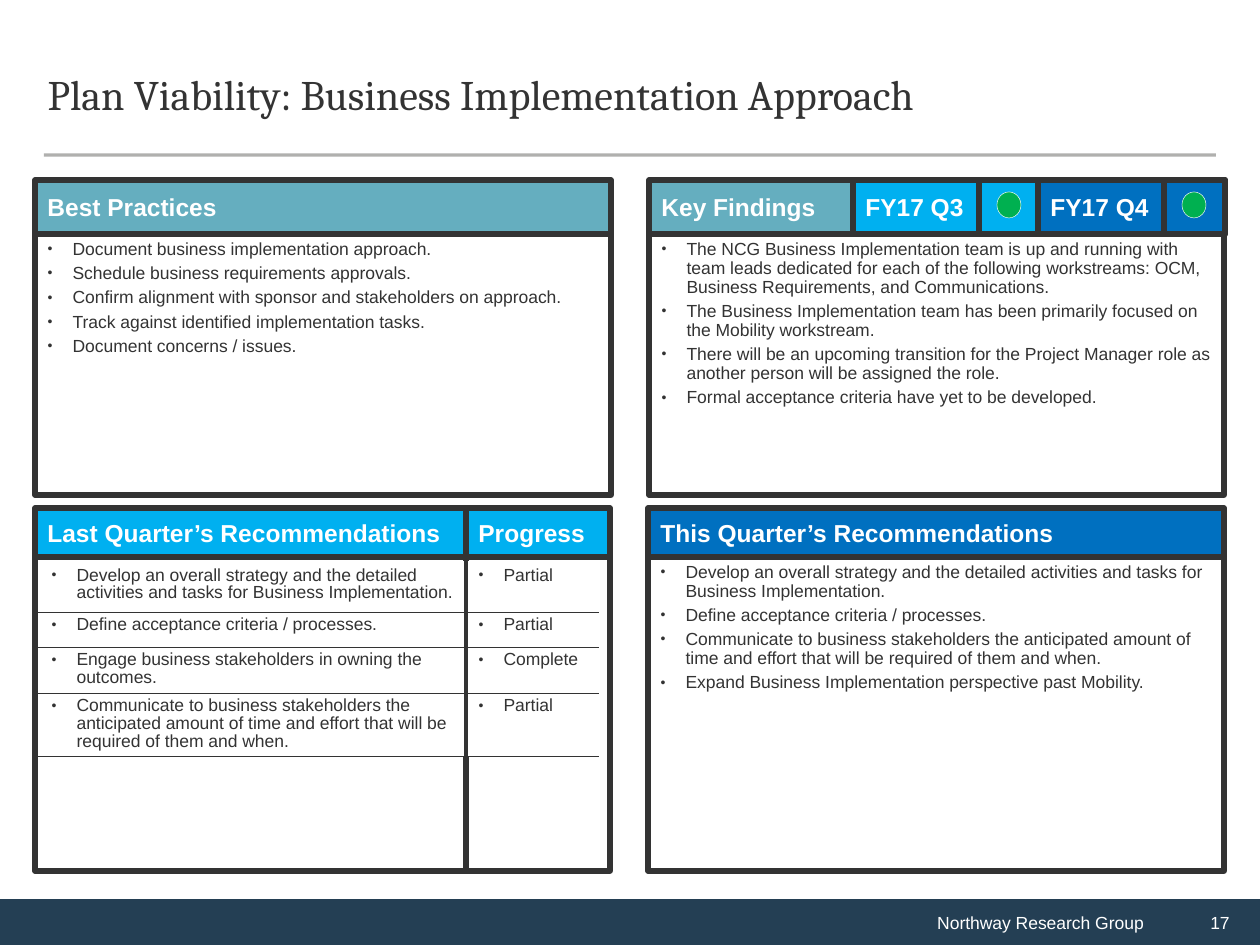
from lxml import etree
from pptx import Presentation
from pptx.dml.color import RGBColor
from pptx.enum.shapes import MSO_CONNECTOR, MSO_SHAPE
from pptx.enum.text import MSO_ANCHOR, MSO_AUTO_SIZE, PP_ALIGN
from pptx.oxml.ns import qn
from pptx.util import Emu, Pt

RECT, OVAL = MSO_SHAPE.RECTANGLE, MSO_SHAPE.OVAL
TOP, MIDDLE = MSO_ANCHOR.TOP, MSO_ANCHOR.MIDDLE
LEFT, CENTER, RIGHT = PP_ALIGN.LEFT, PP_ALIGN.CENTER, PP_ALIGN.RIGHT

DARK, WHITE, NAVY = "333333", "FFFFFF", "243F54"
TEAL, SKY, BLUE, GREEN = "65AEBF", "00B0F0", "0070C0", "00B050"

BEST_PRACTICES = [
    "Document business implementation approach.",
    "Schedule business requirements approvals.",
    "Confirm alignment with sponsor and stakeholders on approach.",
    "Track against identified implementation tasks.",
    "Document concerns / issues.",
]
KEY_FINDINGS = [
    "The NCG Business Implementation team is up and running with team leads dedicated "
    "for each of the following workstreams: OCM, Business Requirements, and Communications.",
    "The Business Implementation team has been primarily focused on the Mobility workstream.",
    "There will be an upcoming transition for the Project Manager role as another person "
    "will be assigned the role.",
    "Formal acceptance criteria have yet to be developed.",
]
STRATEGY = ("Develop an overall strategy and the detailed activities and tasks "
            "for Business Implementation.")
CRITERIA = "Define acceptance criteria / processes."
COMMUNICATE = ("Communicate to business stakeholders the anticipated amount of time "
               "and effort that will be required of them and when.")
THIS_QUARTER = [STRATEGY, CRITERIA, COMMUNICATE,
                "Expand Business Implementation perspective past Mobility."]
PROGRESS = [  # recommendation, progress, row height
    (STRATEGY, "Partial", 50),
    (CRITERIA, "Partial", 35),
    ("Engage business stakeholders in owning the outcomes.", "Complete", 46),
    (COMMUNICATE, "Partial", 62),
]


def px(n):
    return Emu(round(n * 914400 / 126))


def rgb(value):
    return RGBColor.from_string(value)


def add_run(p, text, size, color, bold=False, font="Arial"):
    r = p.add_run()
    r.text = text
    r.font.name, r.font.size, r.font.bold = font, Pt(size), bold
    r.font.color.rgb = rgb(color)


def paint(sp, fill, line=None, width=3):
    """Fill a shape and give it a round-cornered outline."""
    sp.fill.solid()
    sp.fill.fore_color.rgb = rgb(fill)
    if line is None:
        sp.line.fill.background()
        return
    sp.line.color.rgb = rgb(line)
    sp.line.width = Pt(width)
    etree.SubElement(sp.line._get_or_add_ln(), qn("a:round"))


def add_block(slide, box, fill, line=DARK, width=3, kind=RECT):
    sp = slide.shapes.add_shape(kind, *map(px, box))
    sp.shadow.inherit = False
    paint(sp, fill, line, width)
    return sp


def add_header(slide, box, text, fill):
    sp = add_block(slide, box, fill)
    tf = sp.text_frame
    tf.word_wrap, tf.vertical_anchor = True, MIDDLE
    p = tf.paragraphs[0]
    p.alignment = LEFT
    add_run(p, text, 14, WHITE, True)


def add_footer(slide, box, text, align, indent):
    tf = add_block(slide, box, NAVY, None).text_frame
    tf.word_wrap, tf.vertical_anchor = True, MIDDLE
    p = tf.paragraphs[0]
    p.alignment = align
    p._p.get_or_add_pPr().set("marL", str(px(indent)))
    add_run(p, text, 10, WHITE)


def write_bullets(tf, items):
    for i, text in enumerate(items):
        p = tf.add_paragraph() if i else tf.paragraphs[0]
        pPr = p._p.get_or_add_pPr()
        pPr.set("marL", str(px(25)))
        pPr.set("indent", str(-px(25)))
        etree.SubElement(pPr, qn("a:buSzPct"), val="80000")
        etree.SubElement(pPr, qn("a:buFont"), typeface="Arial")
        etree.SubElement(pPr, qn("a:buChar"), char="•")
        p.alignment, p.line_spacing = LEFT, 0.9
        p.space_before = Pt(3 if i else 0)
        add_run(p, text, 10, DARK)


def place(sp, box):
    sp.left, sp.top, sp.width, sp.height = map(px, box)


def fill_list(sp, box, items):
    """Turn a body placeholder into a framed bullet list."""
    place(sp, box)
    paint(sp, WHITE, DARK)
    tf = sp.text_frame
    tf.word_wrap, tf.auto_size, tf.vertical_anchor = True, MSO_AUTO_SIZE.NONE, TOP
    write_bullets(tf, items)


def set_borders(cell, borders):
    tcPr = cell._tc.get_or_add_tcPr()
    for i, (side, (color, width)) in enumerate(borders.items()):
        ln = etree.Element(qn("a:ln" + side), w=str(Pt(width)))
        solid = etree.SubElement(ln, qn("a:solidFill"))
        etree.SubElement(solid, qn("a:srgbClr"), val=color)
        tcPr.insert(i, ln)


def add_progress_table(slide, left, top, widths, rows):
    height = sum(row[2] for row in rows)
    frame = slide.shapes.add_table(len(rows), len(widths), px(left), px(top),
                                   px(sum(widths)), px(height))
    table = frame.table
    table.first_row = table.horz_banding = False
    for column, width in zip(table.columns, widths):
        column.width = px(width)
    edge, divider, rule = (WHITE, 1), (DARK, 3), (DARK, 0.25)
    for i, (*texts, row_height) in enumerate(rows):
        table.rows[i].height = px(row_height)
        for j, text in enumerate(texts):
            cell = table.cell(i, j)
            cell.margin_top = cell.margin_bottom = px(5)
            cell.fill.solid()
            cell.fill.fore_color.rgb = rgb(WHITE)
            set_borders(cell, {"L": divider if j else edge, "R": edge if j else divider,
                               "T": rule if i else edge, "B": rule})
            write_bullets(cell.text_frame, [text])


def add_title(slide, box, text):
    title = slide.shapes.title
    place(title, box)
    tf = title.text_frame
    tf.word_wrap, tf.auto_size, tf.vertical_anchor = True, MSO_AUTO_SIZE.NONE, MIDDLE
    p = tf.paragraphs[0]
    p.alignment, p.line_spacing = LEFT, Pt(26)
    add_run(p, text, 24, DARK, font="Cambria")


def add_rule(slide, x1, x2, y):
    cx = slide.shapes.add_connector(MSO_CONNECTOR.STRAIGHT, px(x1), px(y), px(x2), px(y))
    cx.line.color.rgb = rgb("45433E")
    cx.line.width = Pt(1.75)
    color = cx.line._get_or_add_ln().find(".//" + qn("a:srgbClr"))
    etree.SubElement(color, qn("a:alpha"), val="42000")
    etree.SubElement(cx._element.spPr, qn("a:effectLst"))


def main():
    prs = Presentation()
    prs.slide_width, prs.slide_height = px(1260), px(945)
    slide = prs.slides.add_slide(prs.slide_layouts[4])
    body = {sp.placeholder_format.idx: sp for sp in slide.placeholders}
    body[4]._element.getparent().remove(body[4]._element)

    # Title and footer
    add_title(slide, (35, 37, 1188, 118), "Plan Viability: Business Implementation Approach")
    add_rule(slide, 44, 1216, 155)
    add_footer(slide, (0, 899, 1156, 46), "Northway Research Group", RIGHT, 37)
    add_footer(slide, (1155, 899, 105, 46), "17", CENTER, 25)

    # Best practices
    fill_list(body[1], (35, 234, 576, 261), BEST_PRACTICES)
    add_header(slide, (35, 180, 576, 54), "Best Practices", TEAL)

    # Key findings with a status light for each quarter
    fill_list(body[2], (649, 234, 575, 261), KEY_FINDINGS)
    add_header(slide, (649, 180, 576, 54), "Key Findings", TEAL)
    for left, quarter, color in ((853, "FY17 Q3", SKY), (1038, "FY17 Q4", BLUE)):
        add_header(slide, (left, 180, 127, 54), quarter, color)
        add_block(slide, (left + 126, 180, 61, 54), color)
        add_block(slide, (left + 144, 192, 24, 26), GREEN, WHITE, 0.25, OVAL)

    # Last quarter's recommendations and their progress
    for left, width, text in ((35, 431, "Last Quarter’s Recommendations"),
                              (466, 144, "Progress")):
        add_block(slide, (left, 557, width, 314), WHITE)
        add_header(slide, (left, 508, width, 49), text, SKY)
    add_progress_table(slide, 39, 562, (427, 132), PROGRESS)

    # This quarter's recommendations
    fill_list(body[3], (648, 557, 576, 314), THIS_QUARTER)
    add_header(slide, (648, 508, 576, 49), "This Quarter’s Recommendations", BLUE)

    prs.save("out.pptx")


if __name__ == "__main__":
    main()
